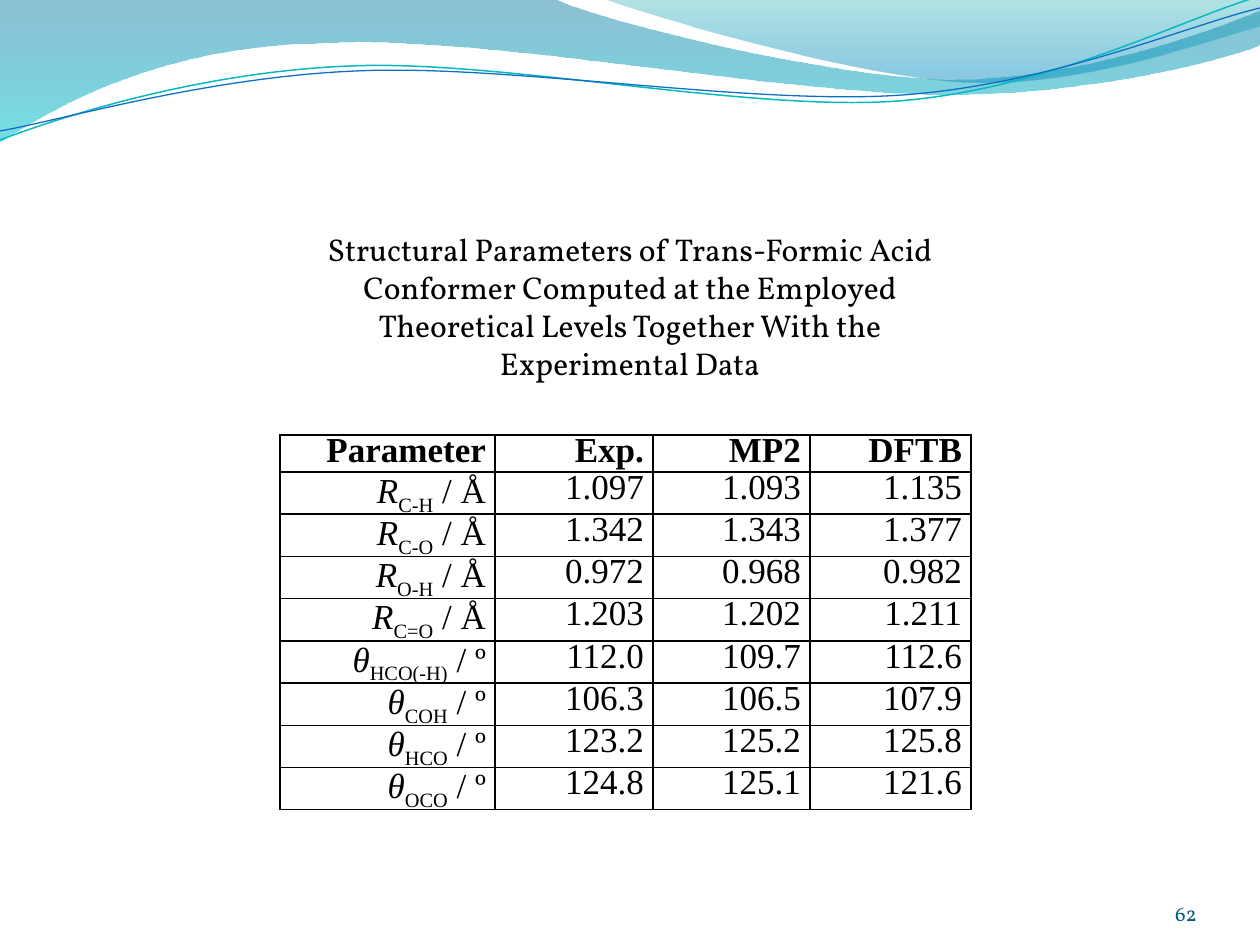
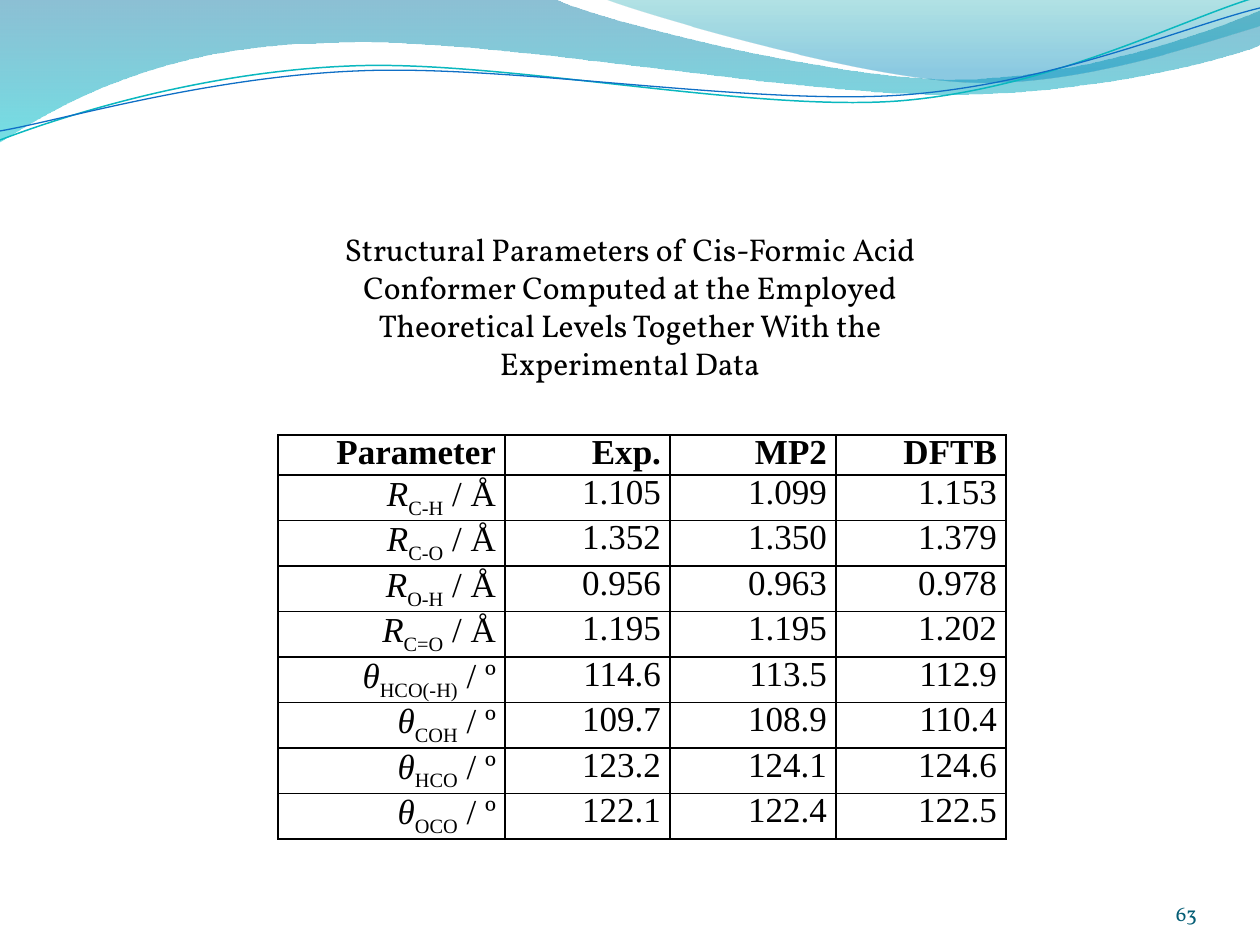
from dataclasses import dataclass

from lxml.etree import SubElement
from pptx import Presentation
from pptx.dml.color import RGBColor as RGB
from pptx.enum.text import MSO_ANCHOR as Anchor, MSO_AUTO_SIZE as AutoSize, PP_ALIGN as Align
from pptx.oxml.ns import qn
from pptx.util import Emu, Pt

COLORS = {
    "text": "000000",
    "border": "000000",
    "number": "045D75",
    "band_top": "0074A1",
    "band_bottom": "00C6CF",
    "corner_top": "00A1A9",
    "corner_bottom": "008BBF",
    "teal_line": "0AB8BF",
    "blue_line": "0F6FC6",
}
HEADING_FONT = "Vollkorn"
TABLE_FONT = "Times New Roman"


@dataclass(frozen=True)
class Stop:
    """A gradient stop with position and opacity in percent."""
    position: int
    color: str
    opacity: int


@dataclass(frozen=True)
class Wave:
    """A header wave: pairs are line ends, sextets are Bézier curves."""
    start: tuple[int, int]
    segments: tuple[tuple[int, ...], ...]
    stops: tuple[Stop, ...] = ()
    line: str = ""
    width: float = 0


@dataclass(frozen=True)
class TableSlide:
    """One slide that compares computed and measured parameters."""
    number: int
    conformer: str
    left: int
    columns: tuple[int, ...]
    header_height: int
    body_height: int
    line_spacing: float
    values: tuple[str, ...]


WAVES = (
    Wave((0, 0), ((554, -1), (600, 21, 837, 79, 955, 79), (1075, 79, 1207, 33, 1260, 11),
                  (1261, 45), (1239, 55, 1096, 96, 940, 94), (781, 94, 481, 35, 324, 43),
                  (163, 45, 58, 105, -1, 142)),
         stops=(Stop(0, "band_top", 45), Stop(100, "band_bottom", 55))),
    Wave((604, -1), ((641, 14, 859, 78, 969, 82), (1079, 87, 1211, 40, 1260, 26), (1260, 0)),
         stops=(Stop(0, "corner_top", 30), Stop(80, "corner_bottom", 45))),
    Wave((0, 140), ((60, 117, 199, 72, 349, 66), (498, 59, 747, 112, 898, 101),
                    (1050, 89, 1182, 19, 1257, -3)), line="teal_line", width=0.85),
    Wave((0, 131), ((59, 121, 207, 77, 357, 71), (508, 64, 752, 106, 903, 95),
                    (1053, 84, 1186, 26, 1260, 8)), line="blue_line", width=0.75),
)

HEADERS = ("Parameter", "Exp.", "MP2", "DFTB")
PARAMETERS = (
    ("R", "C-H", "Å"), ("R", "C-O", "Å"), ("R", "O-H", "Å"), ("R", "C=O", "Å"),
    ("θ", "HCO(-H)", "º"), ("θ", "COH", "º"), ("θ", "HCO", "º"), ("θ", "OCO", "º"),
)
SLIDES = (
    TableSlide(62, "Trans", 280, (215, 158, 157, 161), 37, 338, 0.88, (
        "1.097 1.093 1.135", "1.342 1.343 1.377", "0.972 0.968 0.982", "1.203 1.202 1.211",
        "112.0 109.7 112.6", "106.3 106.5 107.9", "123.2 125.2 125.8", "124.8 125.1 121.6")),
    TableSlide(63, "Cis", 278, (227, 165, 166, 170), 40, 364, 0.95, (
        "1.105 1.099 1.153", "1.352 1.350 1.379", "0.956 0.963 0.978", "1.195 1.195 1.202",
        "114.6 113.5 112.9", "109.7 108.9 110.4", "123.2 124.1 124.6", "122.1 122.4 122.5")),
)


def px(n: float) -> Emu:
    """Turn px at 126 to the inch into EMU."""
    return Emu(round(n * 914400 / 126))


def rgb(name: str) -> RGB:
    """Look up a named colour."""
    return RGB.from_string(COLORS[name])


def write(tf, text: str, *, size: float, font: str, color: str = "text", align=Align.RIGHT,
          bold: bool = False, italic: bool = False, baseline: int = 0) -> None:
    """Append one formatted run to the first paragraph of a text frame."""
    p = tf.paragraphs[0]
    p.alignment = align
    r = p.add_run()
    r.text = text
    r.font.size, r.font.name = Pt(size), font
    r.font.bold, r.font.italic = bold, italic
    r.font.color.rgb = rgb(color)
    if baseline:
        r.font._element.set("baseline", str(baseline * 1000))


def bend(sp, wave: Wave) -> None:
    """Join the three points of each curved segment into one Bézier."""
    corners = iter(list(sp._element.iter(qn("a:lnTo"))))
    for segment in wave.segments:
        first = next(corners)
        if len(segment) == 6:
            first.tag = qn("a:cubicBezTo")
            for corner in (next(corners), next(corners)):
                first.append(corner[0])
                corner.getparent().remove(corner)


def draw_wave(s, wave: Wave) -> None:
    """Draw a gradient band or a thin curved line."""
    points = [(px(seg[i]), px(seg[i + 1])) for seg in wave.segments for i in range(0, len(seg), 2)]
    builder = s.shapes.build_freeform(*map(px, wave.start))
    builder.add_line_segments(points, close=bool(wave.stops))
    sp = builder.convert_to_shape()
    bend(sp, wave)
    sp.shadow.inherit = False
    if wave.line:
        sp.fill.background()
        sp.line.color.rgb = rgb(wave.line)
        sp.line.width = Pt(wave.width)
        return
    sp.line.fill.background()
    sp.fill.gradient()
    sp.fill.gradient_angle = 270
    for target, stop in zip(sp.fill.gradient_stops, wave.stops):
        target.color.rgb = rgb(stop.color)
        target.position = stop.position / 100
    for clr, stop in zip(sp._element.iter(qn("a:srgbClr")), wave.stops):
        SubElement(clr, qn("a:alpha"), val=str(stop.opacity * 1000))


def add_box(s, left: int, top: int, width: int, height: int):
    """Add a wrapping text box and return its text frame."""
    tf = s.shapes.add_textbox(px(left), px(top), px(width), px(height)).text_frame
    tf.word_wrap = True
    return tf


def style_cell(cell, line_spacing: float) -> None:
    """Give a cell thin borders, no fill, tight margins and close lines."""
    cell.margin_left = cell.margin_right = px(9)
    cell.margin_top = cell.margin_bottom = 0
    tc_pr = cell._tc.get_or_add_tcPr()
    for side in ("lnL", "lnR", "lnT", "lnB"):
        ln = SubElement(tc_pr, qn(f"a:{side}"), w=str(Pt(1)))
        SubElement(SubElement(ln, qn("a:solidFill")), qn("a:srgbClr"), val=COLORS["border"])
    cell.fill.background()
    p = cell.text_frame.paragraphs[0]
    p.line_spacing = line_spacing
    p._p.get_or_add_pPr().set("indent", str(px(25)))


def add_parameter_table(s, data: TableSlide) -> None:
    """Draw the table of bond lengths and angles."""
    count = len(PARAMETERS)
    frame = s.shapes.add_table(count + 1, len(HEADERS), px(data.left), px(435),
                               px(sum(data.columns)), px(data.header_height + data.body_height))
    table = frame.table
    table.first_row = table.horz_banding = False
    for column, width in zip(table.columns, data.columns):
        column.width = px(width)
    for i, row in enumerate(table.rows):
        row.height = px(data.body_height / count if i else data.header_height)
    for cell in table.iter_cells():
        style_cell(cell, data.line_spacing)

    fmt = {"size": 20, "font": TABLE_FONT}
    for j, header in enumerate(HEADERS):
        write(table.cell(0, j).text_frame, header, bold=True, **fmt)
    for i, ((symbol, atoms, unit), values) in enumerate(zip(PARAMETERS, data.values), 1):
        tf = table.cell(i, 0).text_frame
        write(tf, symbol, italic=True, **fmt)
        write(tf, atoms, baseline=-25, **fmt)
        write(tf, f" / {unit}", **fmt)
        for j, value in enumerate(values.split(), 1):
            write(table.cell(i, j).text_frame, value, **fmt)


def add_slide(prs, data: TableSlide) -> None:
    """Build one slide with waves, number, table and title."""
    s = prs.slides.add_slide(prs.slide_layouts[6])
    for wave in WAVES:
        draw_wave(s, wave)
    tf = add_box(s, 1092, 876, 105, 50)
    tf.vertical_anchor = Anchor.BOTTOM
    tf.margin_left = tf.margin_top = tf.margin_right = tf.margin_bottom = 0
    write(tf, str(data.number), size=12, font=HEADING_FONT, color="number")
    add_parameter_table(s, data)
    tf = add_box(s, 315, 224, 630, 165)
    tf.auto_size = AutoSize.SHAPE_TO_FIT_TEXT
    write(tf, f"Structural Parameters of {data.conformer}-Formic Acid Conformer Computed at the "
              "Employed Theoretical Levels Together With the Experimental Data",
          size=18, font=HEADING_FONT, align=Align.CENTER)


def main() -> None:
    """Build and save the presentation."""
    prs = Presentation()
    prs.slide_width, prs.slide_height = px(1260), px(945)
    for data in SLIDES:
        add_slide(prs, data)
    prs.save("out.pptx")


if __name__ == "__main__":
    main()
